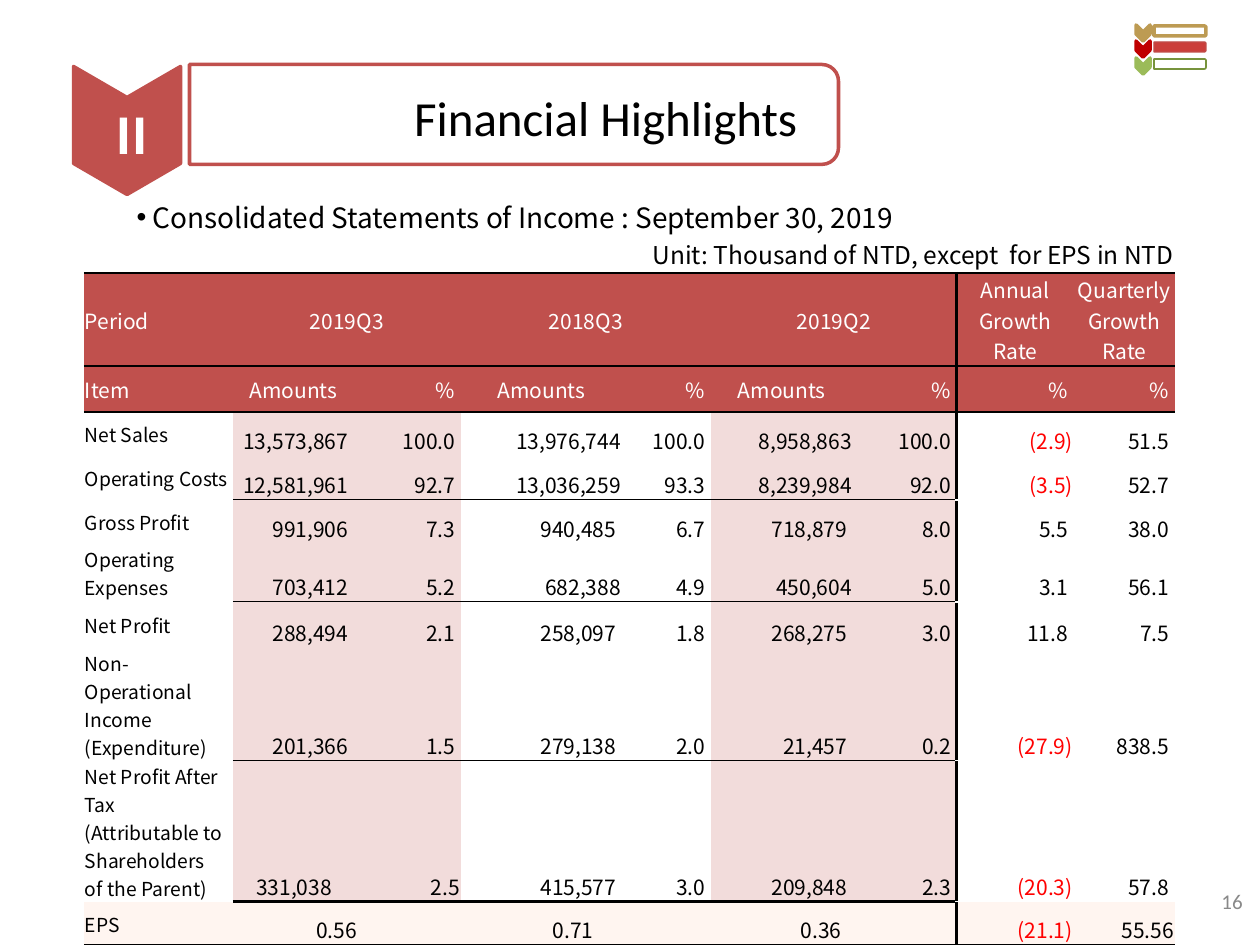
"""Build the Financial Highlights slide with its income statement table."""
from lxml import etree
from pptx import Presentation
from pptx.dml.color import RGBColor
from pptx.enum.shapes import MSO_SHAPE
from pptx.enum.text import MSO_ANCHOR, MSO_AUTO_SIZE, PP_ALIGN
from pptx.oxml.ns import qn
from pptx.util import Pt

LEFT, MID, RIGHT = PP_ALIGN.LEFT, PP_ALIGN.CENTER, PP_ALIGN.RIGHT
CENTER, BOTTOM = MSO_ANCHOR.MIDDLE, MSO_ANCHOR.BOTTOM
CHEVRON, BAR = MSO_SHAPE.CHEVRON, MSO_SHAPE.ROUND_2_SAME_RECTANGLE
NONE = MSO_AUTO_SIZE.NONE
PX = 914400 / 126
SANS = "Noto Sans CJK SC"
RED, PINK, CREAM = "C0504D", "F2DCDB", "FFF5F0"
BLACK, WHITE, LOSS = "000000", "FFFFFF", "FF0000"
color = RGBColor.from_string


def draw(kind, box, fill, line, width):
    shape = slide.shapes.add_shape(kind, *[round(n * PX) for n in box])
    shape.rotation = 90
    shape.shadow.inherit = False
    if fill:
        shape.fill.solid()
        shape.fill.fore_color.rgb = color(fill)
    else:
        shape.fill.background()
    shape.line.color.rgb = color(line)
    shape.line.width = Pt(width)
    return shape


def write(frame, text, size, tint=BLACK, align=LEFT, face=SANS, bold=False):
    frame.word_wrap = True
    frame.text = text
    for para in frame.paragraphs:
        para.alignment = align
        for run in para.runs:
            run.font.size = Pt(size)
            run.font.bold = bold
            run.font.name = face
            run.font.color.rgb = color(tint)
            east = etree.SubElement(run.font._element, qn("a:ea"))
            east.set("typeface", face)


deck = Presentation()
deck.slide_width, deck.slide_height = round(1260 * PX), round(945 * PX)
slide = deck.slides.add_slide(deck.slide_layouts[1])
title, body = slide.placeholders

draw(BAR, (464, -210, 100, 649), None, RED, 2)
badge = draw(CHEVRON, (63, 77, 128, 107), RED, RED, 2)
badge.adjustments[0] = 0.29

title.left, title.top, title.width, title.height = [
    round(n * PX) for n in (190, 66, 610, 110)]
frame = title.text_frame
frame.auto_size = NONE
frame.vertical_anchor = CENTER
frame.margin_left = round(28 * PX)
frame.margin_right = frame.margin_top = frame.margin_bottom = round(3 * PX)
write(frame, "Financial Highlights", 28, align=RIGHT, face="Calibri")
frame.paragraphs[0].line_spacing = 0.9

body.left, body.top, body.width, body.height = [
    round(n * PX) for n in (124, 194, 1071, 59)]
frame = body.text_frame
frame.auto_size = NONE
write(frame, "Consolidated Statements of Income : September 30, 2019", 16)
para = frame.paragraphs[0]
props = para._p.get_or_add_pPr()
props.set("marL", str(round(16 * PX)))
props.set("indent", str(round(-16 * PX)))
etree.SubElement(props, qn("a:buChar")).set("char", "•")
para.space_before = Pt(0)

notes = [
    ((45, 106, 174, 57), CENTER, "Ⅱ", 28, WHITE, MID, SANS, True),
    ((640, 234, 556, 37), MSO_ANCHOR.TOP,
     "Unit: Thousand of NTD, except  for EPS in NTD", 14),
    ((961, 876, 294, 50), CENTER, "16", 12, "898989", RIGHT, "Calibri"),
]
for box, anchor, *look in notes:
    note = slide.shapes.add_textbox(*[round(n * PX) for n in box])
    write(note.text_frame, *look)
    note.text_frame.vertical_anchor = anchor

marks = [
    (5, 26, "BD9B53", None, "BD9B53", 2),
    (21, 42, "C00000", "CB3E3A", "BF4C48", 0.75),
    (38, 59, "9BBB59", WHITE, "77933C", 1),
]
for bar, tip, hue, fill, edge, width in marks:
    draw(BAR, (1175, bar, 10, 52), fill, edge, width)
    draw(CHEVRON, (1135, tip, 16, 14), hue, hue, 2)

rows = [
    ["Period", "2019Q3", "", "2018Q3", "", "2019Q2", "",
     "Annual Growth Rate", "Quarterly Growth Rate"],
    ["Item"] + ["Amounts", "% "] * 3 + ["% ", "% "],
    ["Net Sales", "13,573,867 ", "100.0 ", "13,976,744", "100.0 ",
     "8,958,863", "100.0 ", "(2.9)", "51.5 "],
    ["Operating Costs", "12,581,961 ", "92.7 ", "13,036,259", "93.3 ",
     "8,239,984", "92.0 ", "(3.5)", "52.7 "],
    ["Gross Profit", "991,906 ", "7.3 ", "940,485 ", "6.7 ",
     "718,879 ", "8.0 ", "5.5 ", "38.0 "],
    ["Operating Expenses", "703,412 ", "5.2 ", "682,388", "4.9 ",
     "450,604", "5.0 ", "3.1 ", "56.1 "],
    ["Net Profit", "288,494 ", "2.1 ", "258,097 ", "1.8 ",
     "268,275 ", "3.0 ", "11.8 ", "7.5 "],
    ["Non-Operational Income\v(Expenditure)", "201,366 ", "1.5 ",
     "279,138 ", "2.0 ", "21,457 ", "0.2 ", "(27.9)", "838.5 "],
    ["Net Profit After Tax \v(Attributable to Shareholders\nof the Parent)",
     "331,038　", "2.5", "415,577 ", "3.0 ", "209,848 ", "2.3 ",
     "(20.3)", "57.8 "],
    ["EPS", "0.56　", "", "0.71 　", "", "0.36 　", "", "(21.1)", "55.56"],
]
wide = [149, 121, 107, 161, 89, 142, 104, 117, 101]
tall = [93, 46, 44, 44, 44, 58, 46, 113, 141, 43]
rules = {0: 1.5, 1: 1.5, 2: 1.5, 4: 0.5, 6: 0.5, 8: 0.5, 9: 2, 10: 1}
sums = (4, 6, 8, 9)
last = len(rows) - 1

table = slide.shapes.add_table(
    len(rows), len(wide), round(84 * PX), round(273 * PX),
    round(sum(wide) * PX), round(sum(tall) * PX)).table
table.first_row = table.horz_banding = False
table._tbl.tblPr[0].text = "{2D5ABB26-0587-4C30-8999-92F81FD0307C}"
for col, size in zip(table.columns, wide):
    col.width = round(size * PX)
for row, size in zip(table.rows, tall):
    row.height = round(size * PX)

for r, row in enumerate(rows):
    for c, text in enumerate(row):
        cell = table.cell(r, c)
        head = r < 2
        edges = {"L": (BLACK, 2 if c == 7 else 0),
                 "R": (BLACK, 2 if c == 6 else 0)}
        for side, at in (("T", r), ("B", r + 1)):
            edges[side] = (BLACK, rules.get(at, 0))
            if at in sums and c == 0:
                edges[side] = (BLACK, 0)
            elif at in sums and c > 6:
                edges[side] = (WHITE, 1)
        props = cell._tc.get_or_add_tcPr()
        for side, (hue, width) in edges.items():
            line = etree.SubElement(props, qn("a:ln" + side))
            line.set("w", str(Pt(width)))
            if width:
                fill = etree.SubElement(line, qn("a:solidFill"))
                etree.SubElement(fill, qn("a:srgbClr")).set("val", hue)
            else:
                etree.SubElement(line, qn("a:noFill"))

        shade = RED if head else CREAM if r == last else None
        if not shade and c in (1, 2, 5, 6):
            shade = PINK
        if shade:
            cell.fill.solid()
            cell.fill.fore_color.rgb = color(shade)
        else:
            cell.fill.background()

        cell.margin_left = cell.margin_right = cell.margin_top = round(PX)
        cell.margin_bottom = 0
        cell.vertical_anchor = CENTER if head or c == 0 else BOTTOM
        tint = WHITE if head else LOSS if text.startswith("(") else BLACK
        align = LEFT if c == 0 else RIGHT
        if c and (r == 0 or text == "Amounts" or (r == last and c < 7)):
            align = MID
        write(cell.text_frame, text, 11 if c == 0 and not head else 12,
              tint, align)

for r in (0, last):
    for c in (1, 3, 5):
        table.cell(r, c).merge(table.cell(r, c + 1))

deck.save("out.pptx")
